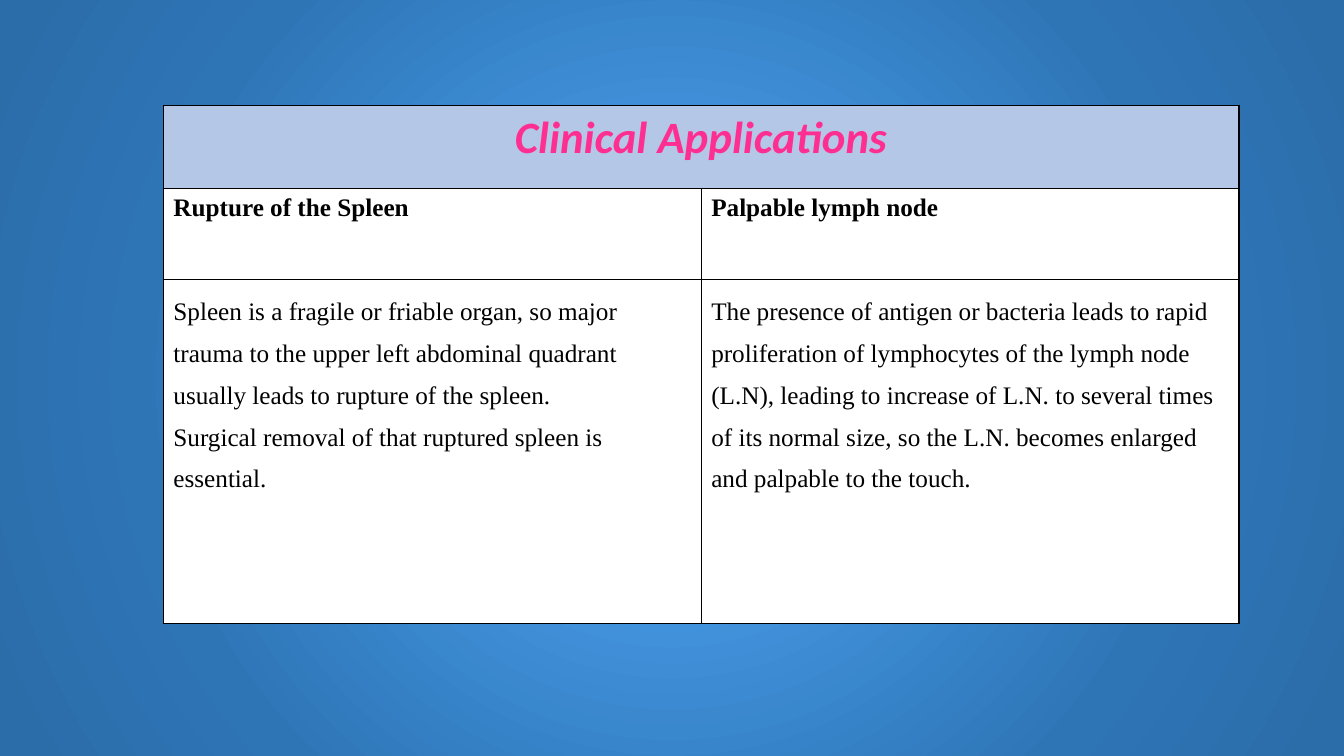
from pptx import Presentation
from pptx.dml.color import RGBColor
from pptx.enum.text import PP_ALIGN
from pptx.oxml import parse_xml
from pptx.oxml.ns import nsdecls
from pptx.util import Inches, Pt

CENTER, JUSTIFY, LEFT = PP_ALIGN.CENTER, PP_ALIGN.JUSTIFY, PP_ALIGN.LEFT
PINK = RGBColor(0xFF, 0x2F, 0x92)
BLACK = RGBColor(0, 0, 0)
WHITE = RGBColor(0xFF, 0xFF, 0xFF)
PALE = RGBColor(0xB4, 0xC7, 0xE7)
GLOW = [(0, RGBColor(0x4B, 0xA3, 0xF4)), (23, RGBColor(0x45, 0x98, 0xE4)),
        (69, RGBColor(0x2E, 0x75, 0xB6)), (97, RGBColor(0x2B, 0x6D, 0xA9))]

HEADS = ["Rupture of the Spleen", "Palpable lymph node"]
NOTES = [
    ["Spleen is a fragile or friable organ, so major trauma to the upper left "
     "abdominal quadrant usually leads to rupture of the spleen.",
     "Surgical removal of that ruptured spleen is essential."],
    ["The presence of antigen or bacteria leads to rapid proliferation of "
     "lymphocytes of the lymph node (L.N), leading to increase of L.N. to "
     "several times of its normal size, so the L.N. becomes enlarged and "
     "palpable to the touch."],
]


def write(cell, lines, align, font="Times New Roman", size=18, color=BLACK,
          bold=False, italic=False, space=None):
    frame = cell.text_frame
    for i, line in enumerate(lines):
        para = frame.add_paragraph() if i else frame.paragraphs[0]
        para.alignment = align
        para.line_spacing = space
        run = para.add_run()
        run.text = line
        run.font.name = font
        run.font.size = Pt(size)
        run.font.bold = bold
        run.font.italic = italic
        run.font.color.rgb = color


def paint(cell, color):
    cell.fill.solid()
    cell.fill.fore_color.rgb = color
    props = cell._tc.get_or_add_tcPr()
    for i, side in enumerate(["lnL", "lnR", "lnT", "lnB"]):
        props.insert(i, parse_xml(
            f'<a:{side} {nsdecls("a")} w="{Pt(1)}"><a:solidFill>'
            f'<a:srgbClr val="{BLACK}"/></a:solidFill></a:{side}>'))


prs = Presentation()
prs.slide_width = Inches(13.33)
prs.slide_height = Inches(7.5)
slide = prs.slides.add_slide(prs.slide_layouts[6])

# Radial background
stops = "".join(f'<a:gs pos="{pos * 1000}"><a:srgbClr val="{color}"/></a:gs>'
                for pos, color in GLOW)
slide.element.cSld.insert(0, parse_xml(
    f'<p:bg {nsdecls("p", "a")}><p:bgPr><a:gradFill rotWithShape="1">'
    f'<a:gsLst>{stops}</a:gsLst><a:path path="circle">'
    '<a:fillToRect l="50000" t="50000" r="50000" b="50000"/></a:path>'
    '</a:gradFill><a:effectLst/></p:bgPr></p:bg>'))

# Table grid
table = slide.shapes.add_table(3, 2, Inches(1.62), Inches(1.05),
                               Inches(10.67), Inches(5.14)).table
table.first_row = False
table.horz_banding = False
for row, height in zip(table.rows, [0.82, 0.9, 3.42]):
    row.height = Inches(height)
for r, color in enumerate([PALE, WHITE, WHITE]):
    for cell in table.rows[r].cells:
        paint(cell, color)

# Heading across both columns
top = table.cell(0, 0)
top.merge(table.cell(0, 1))
write(top, ["Clinical Applications"], CENTER, "Calibri", 32, PINK, True, True)

# Topics and their notes
for c, (head, note) in enumerate(zip(HEADS, NOTES)):
    write(table.cell(1, c), [head], JUSTIFY, bold=True)
    write(table.cell(2, c), note, LEFT, space=1.5)

prs.save("out.pptx")
